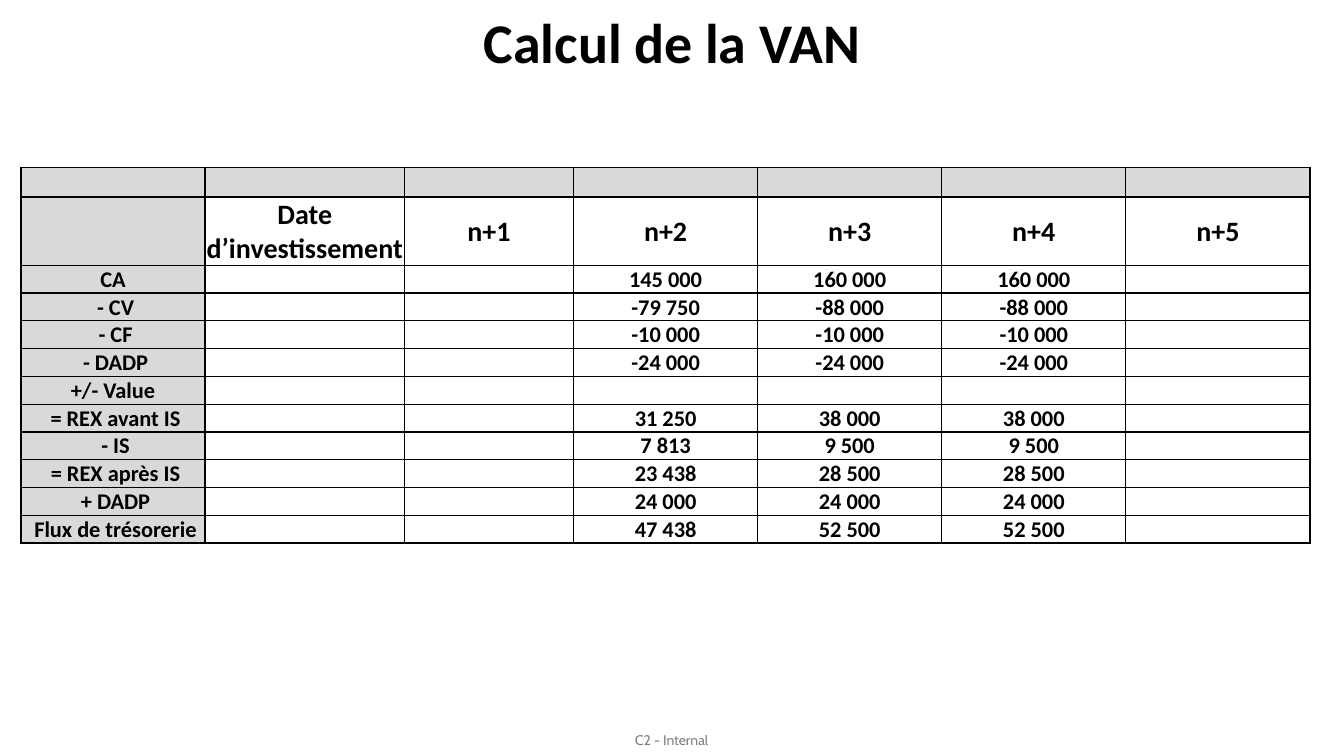
from dataclasses import dataclass

from lxml.etree import SubElement
from pptx import Presentation
from pptx.dml.color import RGBColor
from pptx.enum.text import MSO_ANCHOR, MSO_AUTO_SIZE, PP_ALIGN
from pptx.oxml.ns import qn
from pptx.util import Pt

COLORS = {"black": "000000", "grey": "D9D9D9"}
COL_WIDTHS = [131.5, 142.5, 120.7] + [131.5] * 4
FIRST_YEAR_COL = 3


@dataclass
class Row:
    label: str = ""
    values: tuple[str, ...] = ()
    first_col: int = FIRST_YEAR_COL
    height: float = 19.86
    size: int = 16
    anchor: MSO_ANCHOR = MSO_ANCHOR.BOTTOM
    shaded: bool = False

    def texts(self) -> list[str]:
        cells = [self.label] + [""] * (len(COL_WIDTHS) - 1)
        cells[self.first_col:self.first_col + len(self.values)] = self.values
        return cells


ROWS = [
    Row(height=21, shaded=True),
    Row("", ("Date d’investissement", "n+1", "n+2", "n+3", "n+4", "n+5"),
        first_col=1, height=48.8, size=20, anchor=MSO_ANCHOR.MIDDLE),
    Row("CA", ("145 000", "160 000", "160 000")),
    Row(" - CV", ("-79 750", "-88 000", "-88 000")),
    Row(" - CF", ("-10 000", "-10 000", "-10 000")),
    Row(" - DADP", ("-24 000", "-24 000", "-24 000")),
    Row("+/- Value"),
    Row(" = REX avant IS", ("31 250", "38 000", "38 000")),
    Row(" - IS", ("7 813", "9 500", "9 500")),
    Row(" = REX après IS", ("23 438", "28 500", "28 500")),
    Row(" + DADP", ("24 000", "24 000", "24 000")),
    Row(" Flux de trésorerie", ("47 438", "52 500", "52 500")),
]


def rgb(name: str) -> RGBColor:
    return RGBColor.from_string(COLORS[name])


def format_run(r, size: float, font: str = "Calibri", bold: bool = True) -> None:
    r.font.size = Pt(size)
    r.font.name = font
    r.font.bold = bold
    r.font.color.rgb = rgb("black")


def add_borders(cell) -> None:
    tc_pr = cell._tc.get_or_add_tcPr()
    for side in ("lnL", "lnR", "lnT", "lnB"):
        ln = SubElement(tc_pr, qn(f"a:{side}"), w=str(Pt(1)))
        fill = SubElement(ln, qn("a:solidFill"))
        SubElement(fill, qn("a:srgbClr"), val=COLORS["black"])


def fill_cell(cell, text: str, row: Row, col: int) -> None:
    cell.margin_left = cell.margin_right = cell.margin_top = Pt(0.5)
    cell.margin_bottom = Pt(0)
    cell.vertical_anchor = row.anchor if col else MSO_ANCHOR.MIDDLE
    add_borders(cell)
    if row.shaded or col == 0:
        cell.fill.solid()
        cell.fill.fore_color.rgb = rgb("grey")
    else:
        cell.fill.background()
    p = cell.text_frame.paragraphs[0]
    p.alignment = PP_ALIGN.CENTER
    if text:
        p.text = text
        format_run(p.runs[0], row.size)
    else:
        SubElement(p._p, qn("a:endParaRPr"), sz="1200")


def add_cash_flows(s) -> None:
    height = sum(row.height for row in ROWS)
    frame = s.shapes.add_table(len(ROWS), len(COL_WIDTHS), Pt(15), Pt(119.7),
                               Pt(sum(COL_WIDTHS)), Pt(height))
    table = frame.table
    table.first_row = table.horz_banding = False
    for column, width in zip(table.columns, COL_WIDTHS):
        column.width = Pt(width)
    for i, row in enumerate(ROWS):
        table.rows[i].height = Pt(row.height)
        for j, text in enumerate(row.texts()):
            fill_cell(table.cell(i, j), text, row, j)


def add_title(s) -> None:
    sp = s.shapes.title
    sp.left, sp.top, sp.width, sp.height = Pt(66), Pt(0), Pt(828), Pt(104.4)
    tf = sp.text_frame
    tf.text = "Calcul de la VAN"
    tf.vertical_anchor = MSO_ANCHOR.MIDDLE
    tf.margin_bottom = Pt(43)
    p = tf.paragraphs[0]
    p.alignment = PP_ALIGN.CENTER
    p.line_spacing = 0.9
    format_run(p.runs[0], 40)


def add_footer(s) -> None:
    sp = s.shapes.add_textbox(Pt(453.6), Pt(522.7), Pt(55.4), Pt(12.2))
    tf = sp.text_frame
    tf.margin_left = tf.margin_right = tf.margin_top = tf.margin_bottom = Pt(0)
    tf.auto_size = MSO_AUTO_SIZE.SHAPE_TO_FIT_TEXT
    tf.text = "C2 - Internal"
    r = tf.paragraphs[0].runs[0]
    format_run(r, 10, "Cabin", bold=False)
    clr = r._r.rPr.find(qn("a:solidFill")).find(qn("a:srgbClr"))
    SubElement(clr, qn("a:alpha"), val="50000")


def main() -> None:
    prs = Presentation()
    prs.slide_width, prs.slide_height = Pt(960), Pt(540)
    s = prs.slides.add_slide(prs.slide_layouts[5])
    add_footer(s)
    add_cash_flows(s)
    add_title(s)
    prs.save("out.pptx")


if __name__ == "__main__":
    main()
